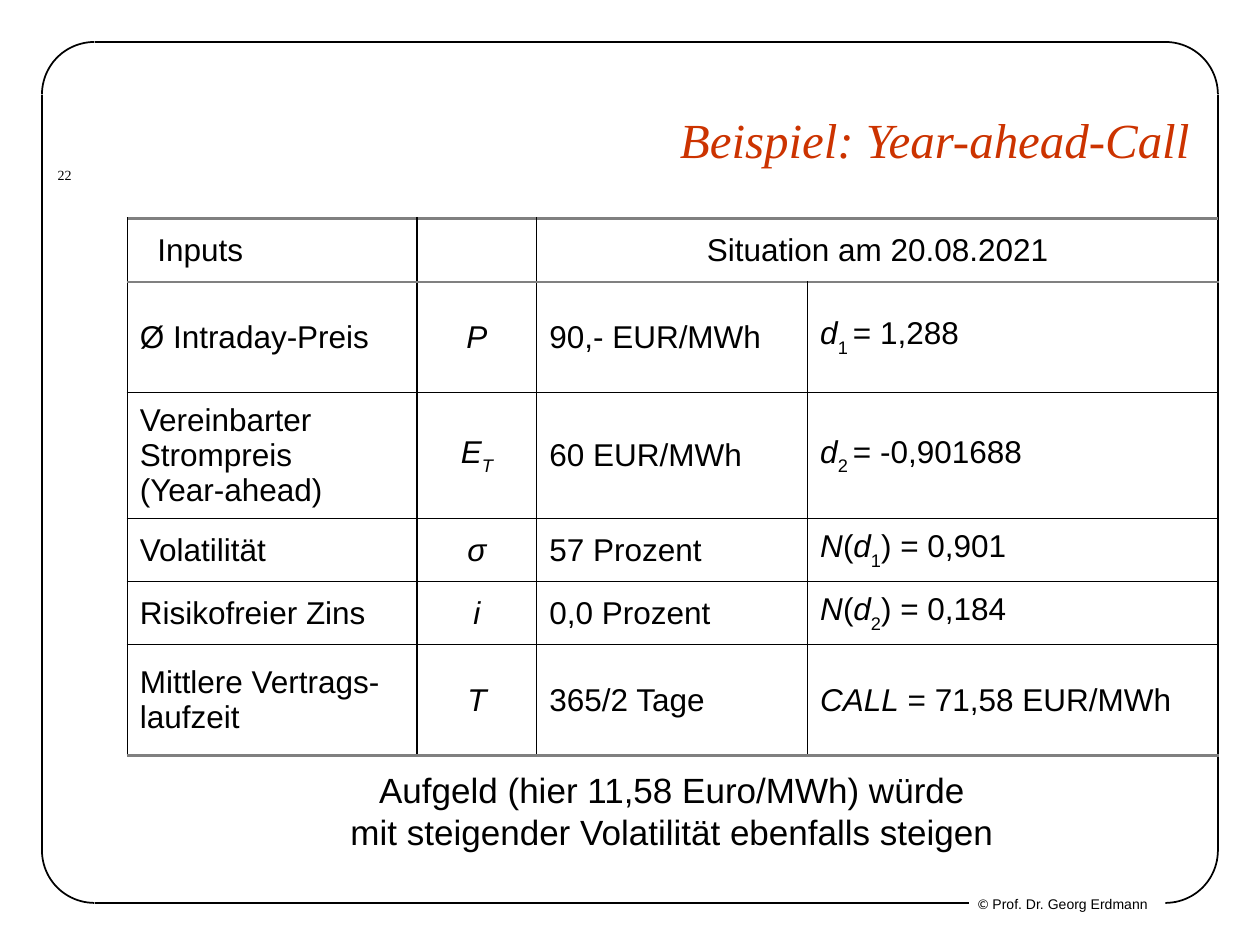
import math

from lxml import etree
from pptx import Presentation
from pptx.dml.color import RGBColor
from pptx.enum import shapes, text
from pptx.oxml import ns
from pptx.util import Pt

HUES = {"ink": "000000", "title": "CC3300", "rule": "808080", "page": "FFFFFF"}
LEFT, TOP, RIGHT, BASE, BEND = 24, 24, 696, 516, 30
COLS = [165.6, 68.4, 154.8, 234.7]
ROWS = [36, 63.4, 63.4, 36, 36, 63.4]
# * switches italic, _ switches subscript
CELLS = [
    ["Inputs", "", "Situation am 20.08.2021", ""],
    ["Ø Intraday-Preis", "*P*", "90,- EUR/MWh", "*d*_1 _= 1,288"],
    ["Vereinbarter Strompreis\n(Year-ahead)", "*E_T_*", "60 EUR/MWh", "*d*_2 _= -0,901688"],
    ["Volatilität", "*σ*", "57 Prozent", "*N*(*d*_1_) = 0,901"],
    ["Risikofreier Zins", "*i*", "0,0 Prozent", "*N*(*d*_2_) = 0,184"],
    ["Mittlere Vertrags-laufzeit", "*T*", "365/2 Tage", "*CALL* = 71,58 EUR/MWh"],
]


def hue(name):
    return RGBColor.from_string(HUES[name])


def style(font, size, face="Arial", color="ink"):
    font.size = Pt(size)
    font.name = face
    font.color.rgb = hue(color)


def add_line(slide, x1, y1, x2, y2):
    line = slide.shapes.add_connector(
        shapes.MSO_CONNECTOR.STRAIGHT, Pt(x1), Pt(y1), Pt(x2), Pt(y2))
    line.line.color.rgb = hue("ink")
    line.line.width = Pt(1)
    etree.SubElement(line._element.spPr, ns.qn("a:effectLst"))


def add_bend(slide, x, y, start):
    angles = [math.radians(start + 90 * n / 24) for n in range(25)]
    dots = [(Pt(x + BEND * math.cos(a)), Pt(y + BEND * math.sin(a))) for a in angles]
    path = slide.shapes.build_freeform(*dots[0])
    path.add_line_segments(dots[1:], close=False)
    bend = path.convert_to_shape()
    bend.shadow.inherit = False
    bend.fill.background()
    bend.line.color.rgb = hue("ink")
    bend.line.width = Pt(1)


def add_frame(slide):
    x1, x2, y1, y2 = LEFT + BEND, RIGHT - BEND, TOP + BEND, BASE - BEND
    add_line(slide, x1, TOP, x2, TOP)
    add_line(slide, x1, BASE, 553.7, BASE)
    for x in (LEFT, RIGHT):
        add_line(slide, x, y1, x, y2)
    for n, (x, y) in enumerate([(x2, y2), (x1, y2), (x1, y1), (x2, y1)]):
        add_bend(slide, x, y, 90 * n)


def add_text(slide, box, lines, size, face="Arial", align=None, wrap=False):
    frame = slide.shapes.add_textbox(*map(Pt, box)).text_frame
    frame.word_wrap = wrap
    frame.auto_size = text.MSO_AUTO_SIZE.SHAPE_TO_FIT_TEXT
    para = frame.paragraphs[0]
    para.text = lines
    para.alignment = align
    style(para.font, size, face)
    return para


def add_title(slide, words):
    title = slide.shapes.title
    title.left, title.top, title.width, title.height = map(Pt, (130.3, 30.2, 556.6, 69.8))
    frame = title.text_frame
    frame.text = words
    frame.auto_size = text.MSO_AUTO_SIZE.NONE
    frame.vertical_anchor = text.MSO_ANCHOR.BOTTOM
    para = frame.paragraphs[0]
    para.alignment = text.PP_ALIGN.RIGHT
    style(para.font, 28, "Times New Roman", "title")
    para.font.italic = True


def write_marks(para, words):
    slant = False
    for row, line in enumerate(words.split("\n")):
        if row:
            para.add_line_break()
        for low, part in enumerate(line.split("_")):
            for turn, bit in enumerate(part.split("*")):
                slant ^= turn > 0
                if not bit:
                    continue
                run = para.add_run()
                run.text = bit
                style(run.font, 18)
                run.font.italic = slant
                if low % 2:
                    run._r.get_or_add_rPr().set("baseline", "-30000")


def add_edge(cell, side, color, width):
    edge = etree.SubElement(
        cell._tc.get_or_add_tcPr(), ns.qn("a:ln" + side), w=str(Pt(width)))
    fill = etree.SubElement(edge, ns.qn("a:solidFill"))
    etree.SubElement(fill, ns.qn("a:srgbClr"), val=HUES[color])


def fill_cell(cell, row, col):
    rules = {0: ("rule", 2), 1: ("rule", 1), len(ROWS): ("rule", 2)}
    thin = ("ink", 0.75)
    cell.vertical_anchor = text.MSO_ANCHOR.MIDDLE
    para = cell.text_frame.paragraphs[0]
    style(para.font, 18)
    write_marks(para, CELLS[row][col])
    if col == 1 or (row == 0 and col == 2):
        para.alignment = text.PP_ALIGN.CENTER
    edges = {"L": thin, "R": thin, "T": rules.get(row, thin), "B": rules.get(row + 1, thin)}
    for side, (color, width) in edges.items():
        add_edge(cell, side, color, width)
    cell.fill.background()


def add_grid(slide):
    table = slide.shapes.add_table(
        len(ROWS), len(COLS), Pt(72.7), Pt(125), Pt(sum(COLS)), Pt(sum(ROWS))).table
    table.first_row = table.horz_banding = False
    for col, width in zip(table.columns, COLS):
        col.width = Pt(width)
    for row, height in zip(table.rows, ROWS):
        row.height = Pt(height)
    table.cell(0, 2).merge(table.cell(0, 3))
    for row in range(len(ROWS)):
        for col in range(len(COLS)):
            fill_cell(table.cell(row, col), row, col)
    table.cell(0, 0).margin_left = Pt(17.2)


def main():
    deck = Presentation()
    deck.slide_width, deck.slide_height = Pt(720), Pt(540)
    slide = deck.slides.add_slide(deck.slide_layouts[5])
    slide.background.fill.solid()
    slide.background.fill.fore_color.rgb = hue("page")
    add_frame(slide)
    credit = add_text(slide, (551.5, 508.3, 113, 17.3), "© ", 8, "Calibri")
    name = credit.add_run()
    name.text = "Prof. Dr. Georg Erdmann"
    name.font.name = "Arial"
    add_text(slide, (25.9, 91.4, 30.2, 16.6), "22", 8, "Times New Roman")
    add_title(slide, "Beispiel: Year-ahead-Call")
    add_grid(slide)
    add_text(slide, (68.4, 435.6, 631.4, 55.4),
             "Aufgeld (hier 11,58 Euro/MWh) würde\vmit steigender Volatilität ebenfalls steigen",
             20, align=text.PP_ALIGN.CENTER, wrap=True)
    deck.save("out.pptx")


if __name__ == "__main__":
    main()
